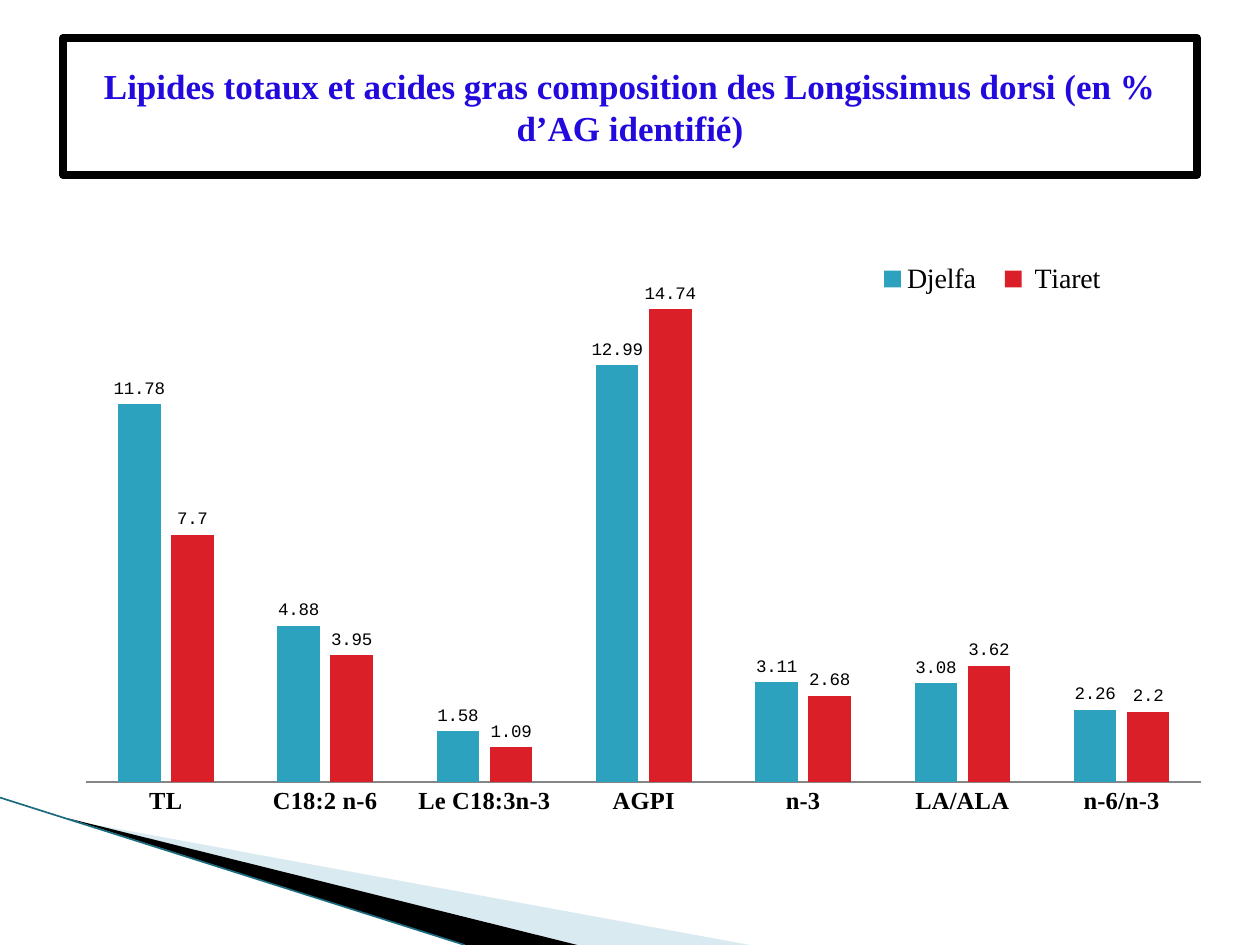
from lxml import etree
from pptx import Presentation
from pptx import util as u
from pptx.chart.data import CategoryChartData
from pptx.dml.color import RGBColor
from pptx.enum import chart as charts, shapes, text
from pptx.oxml import parse_xml
from pptx.oxml.ns import nsdecls, qn

WIDTH, HEIGHT = u.Inches(10), u.Inches(7.5)
WHITE = RGBColor(0xFF, 0xFF, 0xFF)
BLACK = RGBColor(0x00, 0x00, 0x00)
TITLE_BLUE = RGBColor(0x22, 0x09, 0xDD)
PALE_BLUE = RGBColor(0xA0, 0xCB, 0xDC)
DARK_TEAL = RGBColor(0x1B, 0x6B, 0x7F)
AXIS_GRAY = RGBColor(0x86, 0x86, 0x86)
SERIF, MONO = "Times New Roman", "Courier New"

TITLE = "Lipides totaux et acides gras composition des Longissimus dorsi (en % d’AG identifié)"
CATEGORIES = ["TL", "C18:2 n-6", "Le C18:3n-3", "AGPI", "n-3", "LA/ALA", "n-6/n-3"]
SERIES = [
    ("Djelfa", RGBColor(0x2D, 0xA2, 0xBF), [11.78, 4.88, 1.58, 12.99, 3.11, 3.08, 2.26]),
    (" Tiaret", RGBColor(0xDA, 0x1F, 0x28), [7.7, 3.95, 1.09, 14.74, 2.68, 3.62, 2.2]),
]


def inches(*lengths):
    """Convert a box given in inches to slide units."""
    return [u.Inches(length) for length in lengths]


def format_font(font, name, size, color=BLACK, bold=False):
    """Apply typeface, size, colour and weight to a font."""
    font.name, font.size, font.bold = name, u.Pt(size), bold
    font.color.rgb = color


def add_title(slide, box):
    """Place the framed title in its placeholder."""
    title = slide.shapes.title
    title.left, title.top, title.width, title.height = box
    title._element.spPr.append(parse_xml(
        f'<a:prstGeom {nsdecls("a")} prst="roundRect"><a:avLst>'
        '<a:gd name="adj" fmla="val 0"/></a:avLst></a:prstGeom>'))
    title.fill.solid()
    title.fill.fore_color.rgb = WHITE
    title.line.color.rgb = BLACK
    title.line.width = u.Pt(4.33)
    etree.SubElement(title.line._get_or_add_ln(), qn("a:round"))
    frame = title.text_frame
    frame.text = TITLE
    frame.word_wrap = True
    frame.auto_size = text.MSO_AUTO_SIZE.NONE
    frame.vertical_anchor = text.MSO_ANCHOR.MIDDLE
    paragraph = frame.paragraphs[0]
    paragraph.alignment = text.PP_ALIGN.CENTER
    format_font(paragraph.runs[0].font, SERIF, 20, TITLE_BLUE, True)


def add_wedge(slide, box, points, color, opacity=100):
    """Draw a filled wedge from points given as shares of a box."""
    left, top, width, height = box
    corners = [(left + x * width, top + y * height) for x, y in points]
    builder = slide.shapes.build_freeform(*corners[0])
    builder.add_line_segments(corners[1:])
    wedge = builder.convert_to_shape()
    wedge.shadow.inherit = False
    wedge.fill.solid()
    wedge.fill.fore_color.rgb = color
    wedge.line.fill.background()
    fill_color = wedge._element.spPr.find(qn("a:solidFill"))[0]
    etree.SubElement(fill_color, qn("a:alpha"), val=str(opacity * 1000))


def add_corner(slide, box):
    """Draw the two wedges and the edge line of the lower corner."""
    left, top, width, height = box
    add_wedge(slide, box, [(0.09, 0.15), (1, 1), (0.77, 1)], PALE_BLUE, 40)
    add_wedge(slide, box, [(0.09, 0.14), (0.77, 1), (0.62, 1)], BLACK)
    edge = slide.shapes.add_connector(
        shapes.MSO_CONNECTOR.STRAIGHT, left, top, left + int(0.62 * width), top + height)
    edge.line.color.rgb = DARK_TEAL
    edge.line.width = u.Pt(0.95)
    etree.SubElement(edge._element.spPr, qn("a:effectLst"))


def set_layout(element, x, y, width, height, inner=False):
    """Fix the place of a chart part as shares of the chart."""
    for old in element.findall(qn("c:layout")):
        element.remove(old)
    target = '<c:layoutTarget val="inner"/>' if inner else ""
    layout = parse_xml(
        f'<c:layout {nsdecls("c")}><c:manualLayout>{target}'
        '<c:xMode val="edge"/><c:yMode val="edge"/>'
        f'<c:x val="{x}"/><c:y val="{y}"/><c:w val="{width}"/><c:h val="{height}"/>'
        '</c:manualLayout></c:layout>')
    position = element.find(qn("c:legendPos"))
    if position is None:
        element.insert(0, layout)
    else:
        position.addnext(layout)


def add_lipid_chart(slide, box):
    """Place the column chart comparing the two regions."""
    data = CategoryChartData()
    data.categories = CATEGORIES
    for name, _, values in SERIES:
        data.add_series(name, values)
    chart = slide.shapes.add_chart(charts.XL_CHART_TYPE.COLUMN_CLUSTERED, *box, data).chart
    chart.has_title = False
    format_font(chart.font, MONO, 10)

    plot = chart.plots[0]
    plot.gap_width, plot.overlap = 150, -25
    plot.vary_by_categories = False
    for series, (_, color, _) in zip(plot.series, SERIES):
        series.format.fill.solid()
        series.format.fill.fore_color.rgb = color
        labels = series.data_labels
        labels.show_value = True
        labels.position = charts.XL_LABEL_POSITION.OUTSIDE_END
        format_font(labels.font, MONO, 10)

    values = chart.value_axis
    values.minimum_scale, values.maximum_scale = 0, 16
    values.has_major_gridlines = False
    values.visible = False
    categories = chart.category_axis
    categories.major_tick_mark = charts.XL_TICK_MARK.NONE
    categories.format.line.color.rgb = AXIS_GRAY
    format_font(categories.tick_labels.font, SERIF, 14, bold=True)

    chart.has_legend = True
    chart.legend.position = charts.XL_LEGEND_POSITION.TOP
    chart.legend.include_in_layout = False
    format_font(chart.legend.font, SERIF, 16)
    set_layout(chart.legend._element, 0.69, 0.07, 0.22, 0.1)
    set_layout(chart._chartSpace.chart.plotArea, 0.02, 0.104, 0.96, 0.823, inner=True)


def main():
    """Build and save the slide."""
    presentation = Presentation()
    presentation.slide_width, presentation.slide_height = WIDTH, HEIGHT
    slide = presentation.slides.add_slide(presentation.slide_layouts.get_by_name("Title Only"))
    add_title(slide, inches(0.5, 0.3, 9, 1.09))
    add_corner(slide, inches(0, 6.33, 5.95, 1.17))
    add_lipid_chart(slide, inches(0.5, 1.62, 9.22, 4.95))
    presentation.save("out.pptx")


if __name__ == "__main__":
    main()
